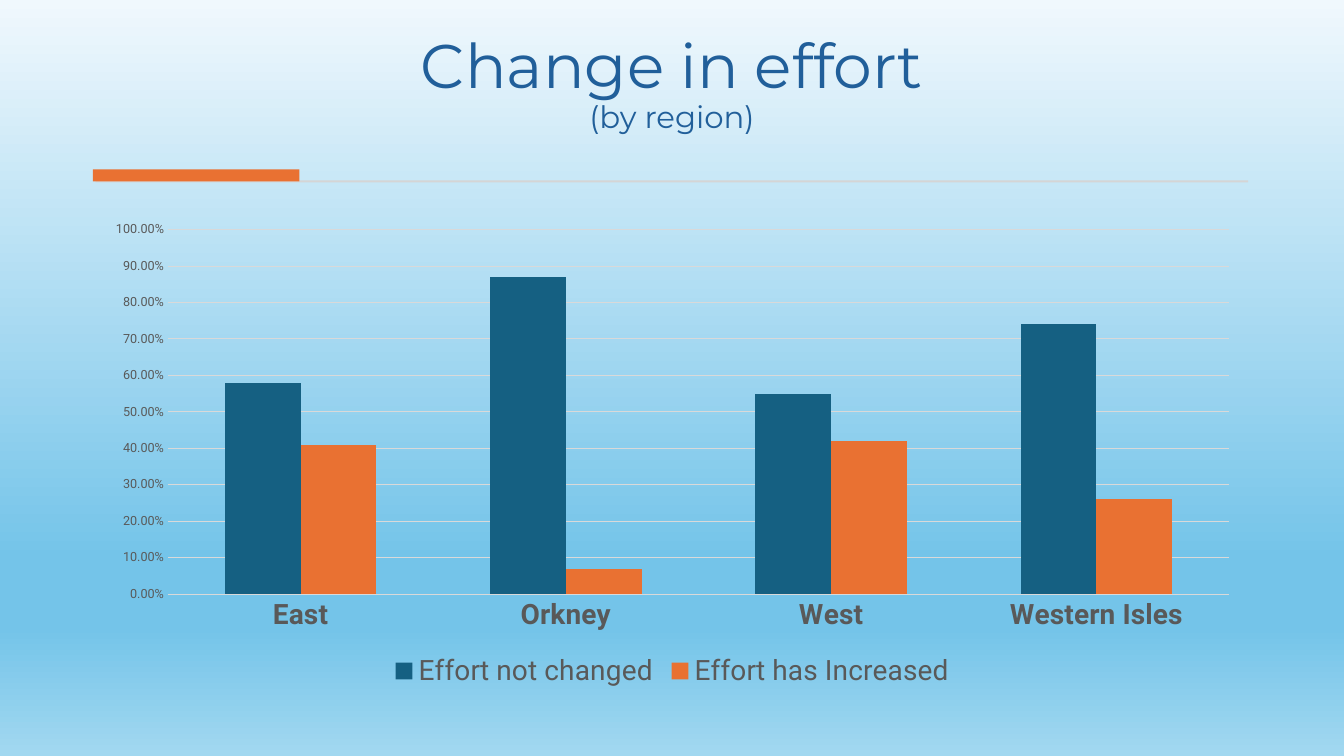
from lxml import etree
from pptx import Presentation
from pptx.chart.data import CategoryChartData
from pptx.dml.color import RGBColor
from pptx.enum.chart import XL_CHART_TYPE, XL_LEGEND_POSITION, XL_TICK_MARK
from pptx.enum.shapes import MSO_SHAPE
from pptx.enum.text import MSO_ANCHOR, PP_ALIGN
from pptx.oxml.ns import qn
from pptx.util import Inches, Pt

RECT = MSO_SHAPE.RECTANGLE
COLUMN = XL_CHART_TYPE.COLUMN_CLUSTERED
BOTTOM = XL_LEGEND_POSITION.BOTTOM
NO_TICK = XL_TICK_MARK.NONE

# Content
TITLE = [("Change in effort", 44), ("(by region)", 22)]
REGIONS = ["East", "Orkney", "West", "Western Isles"]
SERIES = [
    ("Effort not changed", (0.58, 0.87, 0.55, 0.74), "blue"),
    ("Effort has Increased", (0.41, 0.07, 0.42, 0.26), "orange"),
]
COLORS = {
    "title": "215F9A", "blue": "156082", "orange": "E97132",
    "rule": "D5D5D5", "grid": "D9D9D9", "label": "595959", "text": "000000",
}
SKY = [(0, "F0F8FD"), (74, "74C4E9"), (83, "74C4E9"), (100, "A2D8F0")]
BARS = [(0.95, 1.79, 11.43, 0.02, "rule"), (0.92, 1.68, 2.05, 0.12, "orange")]


def color(name):
    return RGBColor.from_string(COLORS[name])


def style(font, size, name, face="Roboto", bold=False):
    font.size, font.name, font.bold = Pt(size), face, bold
    font.color.rgb = color(name)


deck = Presentation()
deck.slide_width, deck.slide_height = Inches(13.33), Inches(7.5)
slide = deck.slides.add_slide(deck.slide_layouts[6])

# Sky gradient, top to bottom
sky = slide.background.fill
sky.gradient()
sky.gradient_angle = 270
stops = slide.element.find(".//" + qn("a:gsLst"))
for stop in list(stops):
    stops.remove(stop)
for pos, tone in SKY:
    stop = etree.SubElement(stops, qn("a:gs"), pos=str(pos * 1000))
    etree.SubElement(stop, qn("a:srgbClr"), val=tone)

# Title
box = slide.shapes.add_textbox(*map(Inches, (0.92, 0.28, 11.49, 1.11)))
frame = box.text_frame
frame.word_wrap = True
frame.vertical_anchor = MSO_ANCHOR.BOTTOM
para = frame.paragraphs[0]
para.alignment = PP_ALIGN.CENTER
para.line_spacing = 0.9
for num, (text, size) in enumerate(TITLE):
    if num:
        para.add_line_break()
    run = para.add_run()
    run.text = text
    style(run.font, size, "title", "Montserrat")

# Rule with its accent bar
for *place, tone in BARS:
    bar = slide.shapes.add_shape(RECT, *map(Inches, place))
    bar.shadow.inherit = False
    bar.fill.solid()
    bar.fill.fore_color.rgb = color(tone)
    bar.line.fill.background()

# Chart
data = CategoryChartData(number_format="0.00%")
data.categories = REGIONS
for name, vals, _ in SERIES:
    data.add_series(name, vals)
place = map(Inches, (0.92, 2.11, 11.5, 4.77))
chart = slide.shapes.add_chart(COLUMN, *place, data).chart
style(chart.font, 10, "text")
chart.has_title = False
chart.has_legend = True
chart.legend.position = BOTTOM
chart.legend.include_in_layout = False
style(chart.legend.font, 20, "label")

plot = chart.plots[0]
plot.gap_width, plot.overlap = 150, 0
plot.vary_by_categories = False
for series, (_, _, tone) in zip(plot.series, SERIES):
    series.format.fill.solid()
    series.format.fill.fore_color.rgb = color(tone)

# Axes
for axis, size, bold in ((chart.category_axis, 20, True),
                         (chart.value_axis, 9, False)):
    axis.major_tick_mark = axis.minor_tick_mark = NO_TICK
    axis.format.line.fill.background()
    style(axis.tick_labels.font, size, "label", bold=bold)
scale = chart.value_axis
scale.minimum_scale, scale.maximum_scale, scale.major_unit = 0, 1, 0.1
scale.tick_labels.number_format = "0.00%"
scale.tick_labels.number_format_is_linked = False
grid = scale.major_gridlines.format.line
grid.width = Pt(0.75)
grid.color.rgb = color("grid")

deck.save("out.pptx")
